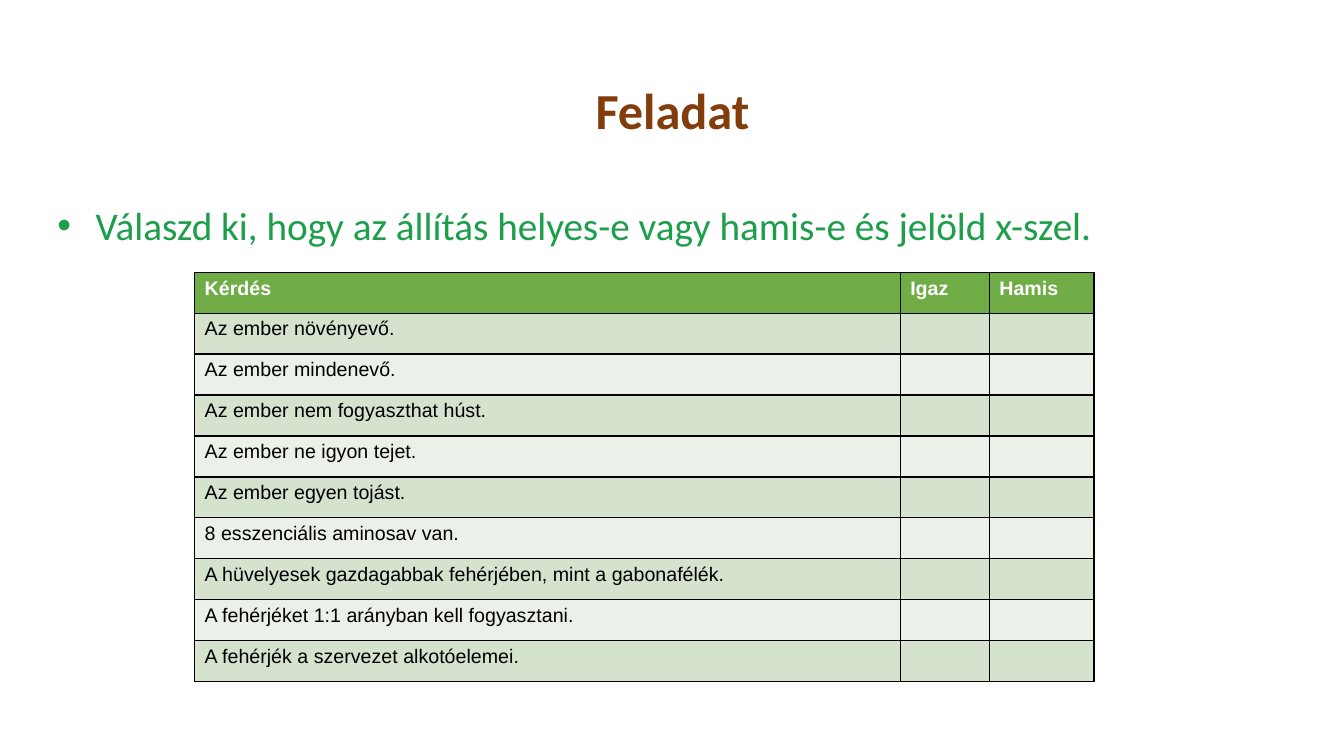
from dataclasses import dataclass

from lxml.etree import SubElement
from pptx import Presentation
from pptx.dml.color import RGBColor
from pptx.enum.text import MSO_ANCHOR, PP_ALIGN
from pptx.oxml.ns import qn
from pptx.slide import Slide
from pptx.table import _Cell
from pptx.text.text import TextFrame
from pptx.util import Emu, Inches, Pt

SLIDE_WIDTH = Inches(13.33)
SLIDE_HEIGHT = Inches(7.5)


@dataclass(frozen=True)
class Theme:
    heading_font: str = "Calibri"
    table_font: str = "Arial"
    title_size: float = 36
    task_size: float = 28
    table_size: float = 14
    border_width: float = 1
    title: str = "833C0B"
    task: str = "1C9E4A"
    header_text: str = "FFFFFF"
    cell_text: str = "000000"
    border: str = "000000"
    header_fill: str = "70AD47"
    band_fills: tuple[str, str] = ("D4E2CE", "EBF1E8")


@dataclass(frozen=True)
class Area:
    left: float
    top: float
    width: float
    height: float


@dataclass(frozen=True)
class Column:
    heading: str
    width: float


THEME = Theme()
TITLE_AREA = Area(2.63, 5.33, 94.82, 19.33)
TASK_AREA = Area(2.63, 26.67, 94.82, 63.47)
TABLE_LEFT, TABLE_TOP, ROW_HEIGHT = 14.48, 36, 5.42
BULLET_INDENT, BULLET_HANGING = 3.75, 2.85
COLUMNS = (Column("Kérdés", 52.5), Column("Igaz", 6.63), Column("Hamis", 7.8))
STATEMENTS = (
    "Az ember növényevő.",
    "Az ember mindenevő.",
    "Az ember nem fogyaszthat húst.",
    "Az ember ne igyon tejet.",
    "Az ember egyen tojást.",
    "8 esszenciális aminosav van.",
    "A hüvelyesek gazdagabbak fehérjében, mint a gabonafélék.",
    "A fehérjéket 1:1 arányban kell fogyasztani.",
    "A fehérjék a szervezet alkotóelemei.",
)


def across(percent: float) -> Emu:
    return Emu(round(SLIDE_WIDTH * percent / 100))


def down(percent: float) -> Emu:
    return Emu(round(SLIDE_HEIGHT * percent / 100))


def write_text(
    frame: TextFrame,
    text: str,
    *,
    font: str,
    size: float,
    color: str,
    bold: bool = False,
    align: PP_ALIGN = PP_ALIGN.LEFT,
    line_spacing: float = 1.0,
    bullet: str = "",
) -> None:
    paragraph = frame.paragraphs[0]
    if bullet:
        properties = paragraph._p.get_or_add_pPr()
        properties.set("marL", str(across(BULLET_INDENT)))
        properties.set("indent", str(-across(BULLET_HANGING)))
        bullet_color = SubElement(properties, qn("a:buClr"))
        SubElement(bullet_color, qn("a:srgbClr"), val=color)
        SubElement(properties, qn("a:buFont"), typeface="Arial")
        SubElement(properties, qn("a:buChar"), char=bullet)
    paragraph.alignment = align
    paragraph.line_spacing = line_spacing
    target = paragraph
    if text:
        target = paragraph.add_run()
        target.text = text
    target.font.name = font
    target.font.size = Pt(size)
    target.font.bold = bold
    target.font.color.rgb = RGBColor.from_string(color)


def add_text_frame(slide: Slide, area: Area, anchor: MSO_ANCHOR) -> TextFrame:
    shape = slide.shapes.add_textbox(
        across(area.left), down(area.top), across(area.width), down(area.height)
    )
    frame = shape.text_frame
    frame.word_wrap = True
    frame.vertical_anchor = anchor
    return frame


def format_cell(cell: _Cell, fill: str) -> None:
    properties = cell._tc.get_or_add_tcPr()
    for side in ("a:lnL", "a:lnR", "a:lnT", "a:lnB"):
        line = SubElement(properties, qn(side), w=str(Pt(THEME.border_width)))
        solid = SubElement(line, qn("a:solidFill"))
        SubElement(solid, qn("a:srgbClr"), val=THEME.border)
    cell.fill.solid()
    cell.fill.fore_color.rgb = RGBColor.from_string(fill)


def add_statement_table(slide: Slide) -> None:
    headings = tuple(column.heading for column in COLUMNS)
    rows = [headings] + [(statement, "", "") for statement in STATEMENTS]
    table = slide.shapes.add_table(
        len(rows),
        len(COLUMNS),
        across(TABLE_LEFT),
        down(TABLE_TOP),
        across(sum(column.width for column in COLUMNS)),
        down(ROW_HEIGHT * len(rows)),
    ).table
    table.horz_banding = False
    for index, column in enumerate(COLUMNS):
        table.columns[index].width = across(column.width)
    for row_index, row in enumerate(rows):
        table.rows[row_index].height = down(ROW_HEIGHT)
        is_header = row_index == 0
        fill = THEME.header_fill if is_header else THEME.band_fills[(row_index - 1) % 2]
        for column_index, text in enumerate(row):
            cell = table.cell(row_index, column_index)
            format_cell(cell, fill)
            write_text(
                cell.text_frame,
                text,
                font=THEME.table_font,
                size=THEME.table_size,
                color=THEME.header_text if is_header else THEME.cell_text,
                bold=is_header,
            )


def main() -> None:
    presentation = Presentation()
    presentation.slide_width = SLIDE_WIDTH
    presentation.slide_height = SLIDE_HEIGHT
    slide = presentation.slides.add_slide(presentation.slide_layouts[6])
    write_text(
        add_text_frame(slide, TITLE_AREA, MSO_ANCHOR.MIDDLE),
        "Feladat",
        font=THEME.heading_font,
        size=THEME.title_size,
        color=THEME.title,
        bold=True,
        align=PP_ALIGN.CENTER,
        line_spacing=0.9,
    )
    write_text(
        add_text_frame(slide, TASK_AREA, MSO_ANCHOR.TOP),
        "Válaszd ki, hogy az állítás helyes-e vagy hamis-e és jelöld x-szel.",
        font=THEME.heading_font,
        size=THEME.task_size,
        color=THEME.task,
        line_spacing=0.9,
        bullet="•",
    )
    add_statement_table(slide)
    presentation.save("out.pptx")


if __name__ == "__main__":
    main()
